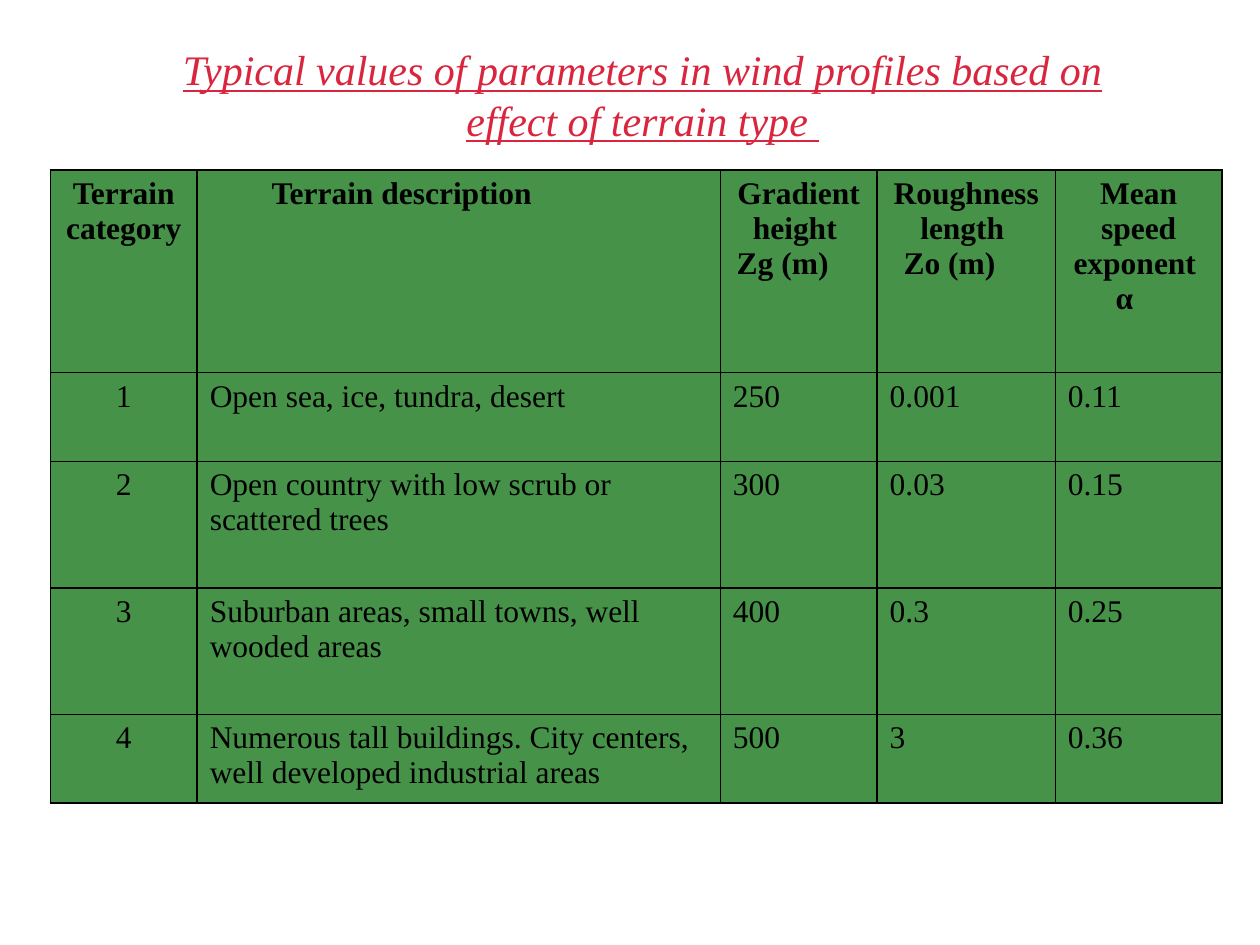
from lxml.etree import SubElement
from pptx import Presentation
from pptx.dml.color import RGBColor as RGB
from pptx.enum.text import PP_ALIGN as Align
from pptx.oxml.ns import qn
from pptx.util import Inches, Pt

RED = RGB(0xD9, 0x25, 0x3E)
GREEN = RGB(0x47, 0x92, 0x49)
BLACK = RGB(0, 0, 0)
FACE = "Times New Roman"
WIDE, HIGH = Inches(10), Inches(7.5)

TITLE = ("Typical values of parameters in wind profiles "
         "based on effect of terrain type ")
COLS = [1.17, 4.17, 1.25, 1.42, 1.33]
ROWS = [1.6, 0.7, 1, 1, 0.7]

# Each header line is (text, left indent in inches); None centres the line.
HEADS = [
    [("Terrain category", None)],
    [("Terrain description", 0.49)],
    [("Gradient height ", None), ("Zg (m)", 0.03)],
    [("Roughness length ", None), ("Zo (m)", 0.11)],
    [("Mean speed exponent ", None), ("α", 0.38)],
]
DATA = [
    ("1", "Open sea, ice, tundra, desert", "250", "0.001", "0.11"),
    ("2", "Open country with low scrub or scattered trees",
     "300", "0.03", "0.15"),
    ("3", "Suburban areas, small towns, well wooded areas",
     "400", "0.3", "0.25"),
    ("4", "Numerous tall buildings. City centers, "
     "well developed industrial areas", "500", "3", "0.36"),
]


def share(left, top, width, height):
    """Turn shares of the slide's size into a box."""
    return (round(WIDE * left), round(HIGH * top),
            round(WIDE * width), round(HIGH * height))


def write(para, text, color, **look):
    run = para.add_run()
    run.text = text
    for name, value in {"name": FACE, **look}.items():
        setattr(run.font, name, value)
    run.font.color.rgb = color


def add_title(slide, box):
    frame = slide.shapes.add_textbox(*box).text_frame
    frame.word_wrap = True
    para = frame.paragraphs[0]
    para.alignment = Align.CENTER
    write(para, TITLE, RED, size=Pt(24), italic=True, underline=True)


def edge(cell):
    """Draw a thin black border on all four sides."""
    props = cell._tc.get_or_add_tcPr()
    for side in ("lnL", "lnR", "lnT", "lnB"):
        line = SubElement(props, qn("a:" + side), w=str(Pt(1)))
        fill = SubElement(line, qn("a:solidFill"))
        SubElement(fill, qn("a:srgbClr"), val=str(BLACK))


def fill_cell(cell, lines, bold):
    edge(cell)
    cell.fill.solid()
    cell.fill.fore_color.rgb = GREEN
    frame = cell.text_frame
    for i, (text, indent) in enumerate(lines):
        para = frame.add_paragraph() if i else frame.paragraphs[0]
        para.alignment = Align.CENTER if indent is None else Align.LEFT
        if indent:
            props = para._p.get_or_add_pPr()
            props.set("marL", str(Inches(indent)))
            props.set("indent", "0")
        write(para, text, BLACK, size=Pt(18), bold=bold)


def add_grid(slide, box):
    left, top, width, height = box
    table = slide.shapes.add_table(len(ROWS), len(COLS), *box).table
    for col, part in zip(table.columns, COLS):
        col.width = round(width * part / sum(COLS))
    for row, part in zip(table.rows, ROWS):
        row.height = round(height * part / sum(ROWS))
    body = [[[(text, 0 if c else None)] for c, text in enumerate(row)]
            for row in DATA]
    for r, row in enumerate([HEADS] + body):
        for c, lines in enumerate(row):
            fill_cell(table.cell(r, c), lines, bold=r == 0)


def main():
    deck = Presentation()
    deck.slide_width, deck.slide_height = WIDE, HIGH
    slide = deck.slides.add_slide(deck.slide_layouts[6])
    add_title(slide, share(0.1, 0.04, 0.82, 0.12))
    add_grid(slide, share(0.04, 0.18, 0.93, 0.67))
    deck.save("out.pptx")


if __name__ == "__main__":
    main()
